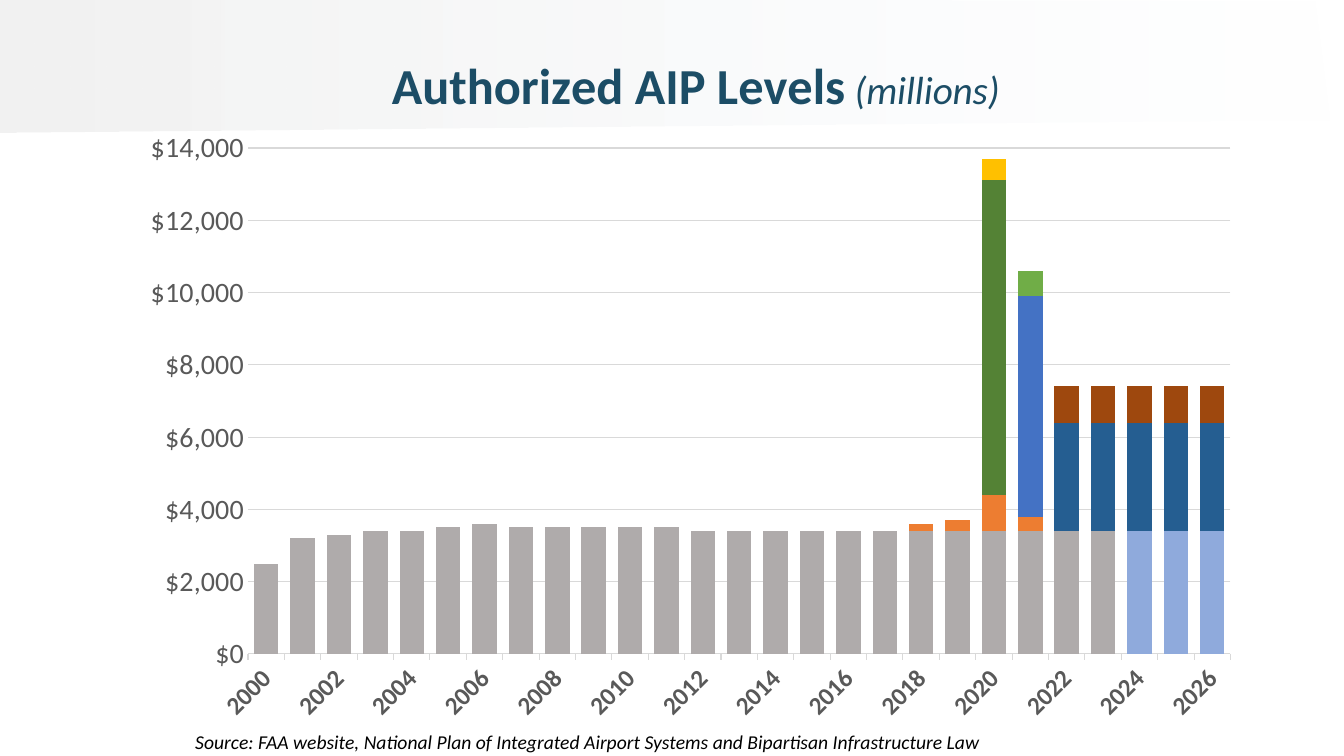
from dataclasses import dataclass

from lxml.etree import _Element as Element
from pptx import Presentation
from pptx.chart.chart import Chart
from pptx.chart.data import CategoryChartData
from pptx.dml.color import RGBColor
from pptx.enum.chart import XL_CHART_TYPE as ChartType
from pptx.enum.chart import XL_TICK_MARK as TickMark
from pptx.oxml import parse_xml
from pptx.oxml.ns import nsdecls, qn
from pptx.oxml.xmlchemy import OxmlElement
from pptx.slide import Slide
from pptx.util import Cm, Pt

FONT = "Calibri"
BLACK = RGBColor(0x00, 0x00, 0x00)
NAVY = RGBColor(0x1C, 0x4D, 0x66)
LABEL_GRAY = RGBColor(0x59, 0x59, 0x59)
LINE_GRAY = RGBColor(0xD9, 0xD9, 0xD9)
BAND_GRAY = RGBColor(0xF2, 0xF2, 0xF2)
BAND_PALE = RGBColor(0xF7, 0xFA, 0xFD)
BAR_GRAY = RGBColor(0xAF, 0xAB, 0xAB)
ORANGE = RGBColor(0xED, 0x7D, 0x31)
DARK_GREEN = RGBColor(0x54, 0x82, 0x35)
GOLD = RGBColor(0xFF, 0xC0, 0x00)
BLUE = RGBColor(0x44, 0x72, 0xC4)
GREEN = RGBColor(0x70, 0xAD, 0x47)
DARK_BLUE = RGBColor(0x25, 0x5E, 0x91)
BROWN = RGBColor(0x9E, 0x48, 0x0E)
LIGHT_BLUE = RGBColor(0x8F, 0xAA, 0xDC)

YEARS = range(2000, 2027)
LIGHT_YEARS = range(2024, 2027)
BASE_LEVELS = [2500, 3200, 3300, 3400, 3400, 3500, 3600] + [3500] * 5 + [3400] * 15


@dataclass(frozen=True)
class Funding:
    color: RGBColor
    first_year: int
    levels: list[int]

    def by_year(self) -> list[int | None]:
        levels = dict(enumerate(self.levels, self.first_year))
        return [levels.get(year) for year in YEARS]


@dataclass(frozen=True)
class Area:
    left: int
    top: int
    width: int
    height: int


@dataclass(frozen=True)
class TitleSpan:
    text: str
    size: int
    bold: bool


FUNDINGS = [
    Funding(BAR_GRAY, 2000, BASE_LEVELS),
    Funding(ORANGE, 2018, [200, 300, 1000, 400]),
    Funding(DARK_GREEN, 2020, [8700]),
    Funding(GOLD, 2020, [600]),
    Funding(BLUE, 2021, [6100]),
    Funding(GREEN, 2021, [700]),
    Funding(DARK_BLUE, 2022, [3000] * 5),
    Funding(BROWN, 2022, [1000] * 5),
]
TITLE = [
    TitleSpan("Authorized AIP Levels", 36, True),
    TitleSpan(" (millions)", 28, False),
]
CHART_AREA = Area(Cm(3.23), Cm(0.64), Cm(28.37), Cm(17.91))
PLOT_AREA = Area(Cm(6.25), Cm(3.73), Cm(24.76), Cm(12.75))
TITLE_AREA = Area(Cm(9.8), Cm(1.3), Cm(15.5), Cm(1.55))


def add_band(slide: Slide) -> None:
    builder = slide.shapes.build_freeform(0, 0)
    corners = [(0, 3.35), (33.5, 3.02), (33.12, 0.05), (17.45, 0)]
    builder.add_line_segments([(Cm(x), Cm(y)) for x, y in corners])
    band = builder.convert_to_shape()
    band.shadow.inherit = False
    band.line.fill.background()
    band.fill.gradient()
    band.fill.gradient_angle = 0
    start, end = band.fill.gradient_stops
    start.color.rgb, start.position = BAND_GRAY, 0
    end.color.rgb, end.position = BAND_PALE, 1
    alpha = OxmlElement("a:alpha")
    alpha.set("val", "4000")
    band.element.findall(".//" + qn("a:srgbClr"))[-1].append(alpha)


def make_layout(area: Area, inner: bool) -> Element:
    x = (area.left - CHART_AREA.left) / CHART_AREA.width
    y = (area.top - CHART_AREA.top) / CHART_AREA.height
    width = area.width / CHART_AREA.width
    height = area.height / CHART_AREA.height
    target = '<c:layoutTarget val="inner"/>' if inner else ""
    size = f'<c:w val="{width}"/><c:h val="{height}"/>' if inner else ""
    return parse_xml(
        f'<c:layout {nsdecls("c")}><c:manualLayout>{target}'
        '<c:xMode val="edge"/><c:yMode val="edge"/>'
        f'<c:x val="{x}"/><c:y val="{y}"/>{size}'
        "</c:manualLayout></c:layout>"
    )


def place_part(part: Element, layout: Element, index: int) -> None:
    for old in part.findall(qn("c:layout")):
        part.remove(old)
    part.insert(index, layout)


def add_title(chart: Chart) -> None:
    chart.has_title = True
    para = chart.chart_title.text_frame.paragraphs[0]
    for title_span in TITLE:
        span = para.add_run()
        span.text = title_span.text
        span.font.name = FONT
        span.font.size = Pt(title_span.size)
        span.font.bold = title_span.bold
        span.font.italic = not title_span.bold
        span.font.color.rgb = NAVY
    chart.chart_title.include_in_layout = False


def style_axes(chart: Chart) -> None:
    years, dollars = chart.category_axis, chart.value_axis
    for axis, size in ((years, 18), (dollars, 20)):
        font = axis.tick_labels.font
        font.name, font.size = FONT, Pt(size)
        font.bold = axis is years
        font.color.rgb = LABEL_GRAY
        axis.minor_tick_mark = TickMark.NONE
    years.major_tick_mark = TickMark.OUTSIDE
    dollars.major_tick_mark = TickMark.NONE
    dollars.minimum_scale, dollars.maximum_scale = 0, 14000
    dollars.major_unit = 2000
    dollars.tick_labels.number_format = '"$"#,##0'
    dollars.tick_labels.number_format_is_linked = False
    dollars.format.line.fill.background()
    for line in (years.format.line, dollars.major_gridlines.format.line):
        line.color.rgb = LINE_GRAY
        line.width = Pt(0.75)


def add_levels_chart(slide: Slide) -> None:
    data = CategoryChartData()
    data.categories = [str(year) for year in YEARS]
    for number, funding in enumerate(FUNDINGS, 1):
        data.add_series(f"Series {number}", funding.by_year())
    area = CHART_AREA
    chart = slide.shapes.add_chart(
        ChartType.COLUMN_STACKED, area.left, area.top, area.width, area.height, data
    ).chart
    chart.has_legend = False
    chart.font.name, chart.font.size = FONT, Pt(10)
    chart.font.color.rgb = BLACK
    add_title(chart)
    style_axes(chart)
    plot = chart.plots[0]
    plot.gap_width, plot.overlap = 49, 100
    plot.vary_by_categories = False
    for series, funding in zip(plot.series, FUNDINGS):
        series.invert_if_negative = False
        series.format.fill.solid()
        series.format.fill.fore_color.rgb = funding.color
    for year in LIGHT_YEARS:
        fill = plot.series[0].points[year - YEARS[0]].format.fill
        fill.solid()
        fill.fore_color.rgb = LIGHT_BLUE
    root = chart._chartSpace
    place_part(root.find(".//" + qn("c:title")), make_layout(TITLE_AREA, False), 1)
    place_part(root.find(".//" + qn("c:plotArea")), make_layout(PLOT_AREA, True), 0)
    year_axis = root.find(".//" + qn("c:catAx"))
    year_axis.find(qn("c:txPr")).find(qn("a:bodyPr")).set("rot", "-2700000")
    skip = OxmlElement("c:tickLblSkip")
    skip.set("val", "2")
    year_axis.find(qn("c:noMultiLvlLbl")).addprevious(skip)


def add_source(slide: Slide) -> None:
    box = slide.shapes.add_textbox(Cm(4.67), Cm(18.26), Cm(20.37), Cm(0.86))
    box.text_frame.word_wrap = False
    span = box.text_frame.paragraphs[0].add_run()
    span.text = (
        "Source: FAA website, National Plan of Integrated Airport Systems "
        "and Bipartisan Infrastructure Law"
    )
    span.font.name, span.font.size = FONT, Pt(14)
    span.font.italic = True
    span.font.color.rgb = BLACK


def main() -> None:
    deck = Presentation()
    deck.slide_width, deck.slide_height = Cm(33.87), Cm(19.05)
    page = deck.slides.add_slide(deck.slide_layouts[6])
    add_band(page)
    add_levels_chart(page)
    add_source(page)
    deck.save("out.pptx")


if __name__ == "__main__":
    main()
